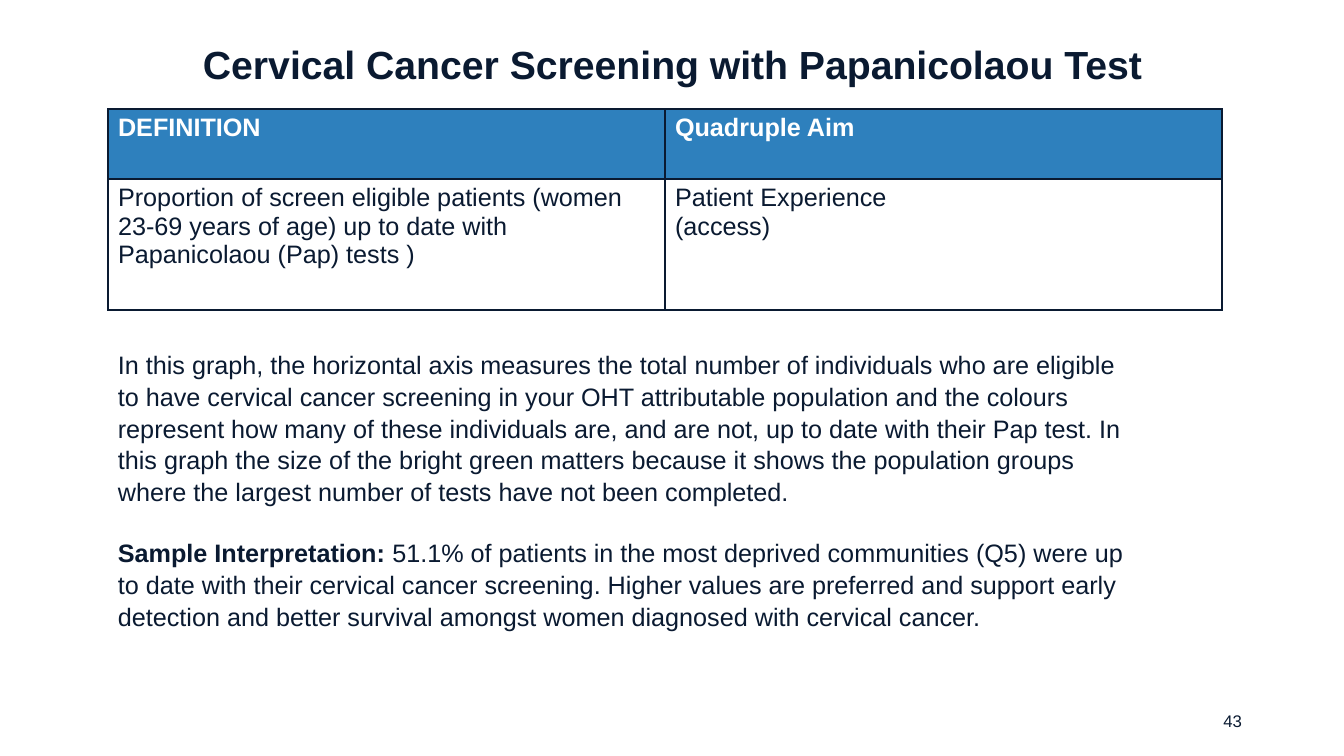
from dataclasses import dataclass

from lxml.etree import SubElement
from pptx import Presentation
from pptx.dml.color import RGBColor as RGB
from pptx.enum.text import MSO_ANCHOR as ANCHOR, MSO_AUTO_SIZE as FIT, PP_ALIGN as ALIGN
from pptx.oxml.ns import qn
from pptx.util import Pt

PX = 914400 / 100.8


@dataclass(frozen=True)
class Theme:
    font: str = "Arial"
    ink: str = "0A1A31"
    white: str = "FFFFFF"
    header: str = "2E80BD"
    title: int = 28
    body: int = 18
    number: int = 12


theme = Theme()


def px(*lengths):
    return [round(n * PX) for n in lengths]


def write(tf, *paragraphs, size=theme.body, color=theme.ink, bold=False,
          align=ALIGN.LEFT, anchor=ANCHOR.TOP, spacing=None, gap=0):
    """Fill a text frame; each paragraph is a string or a list of (text, bold) runs."""
    tf.word_wrap = True
    tf.vertical_anchor = anchor
    for i, content in enumerate(paragraphs):
        p = tf.add_paragraph() if i else tf.paragraphs[0]
        p.alignment = align
        p.line_spacing = spacing
        p.space_before = Pt(gap if i else 0)
        runs = [(content, bold)] if isinstance(content, str) else content
        for text, strong in runs:
            r = p.add_run()
            r.text = text
            r.font.name = theme.font
            r.font.size = Pt(size)
            r.font.bold = strong
            r.font.color.rgb = RGB.from_string(color)


prs = Presentation()
prs.slide_width, prs.slide_height = px(1344, 756)
s = prs.slides.add_slide(prs.slide_layouts[5])

# Title
title = s.shapes.title
title.left, title.top, title.width, title.height = px(78, 24, 1189, 85)
write(title.text_frame, "Cervical Cancer Screening with Papanicolaou Test", size=theme.title,
      bold=True, align=ALIGN.CENTER, anchor=ANCHOR.MIDDLE, spacing=0.9)

# Definition table
rows = [
    [["DEFINITION"], ["Quadruple Aim"]],
    [["Proportion of screen eligible patients (women 23-69 years of age) up to date with "
      "Papanicolaou (Pap) tests )"],
     ["Patient Experience", "(access)"]],
]
table = s.shapes.add_table(2, 2, *px(108, 109, 1114, 201)).table
for row, height in zip(table.rows, px(70, 131)):
    row.height = height
for column in table.columns:
    column.width = px(557)[0]

for i, row in enumerate(rows):
    header = i == 0
    for j, paragraphs in enumerate(row):
        cell = table.cell(i, j)
        tcPr = cell._tc.get_or_add_tcPr()
        for side in ("a:lnL", "a:lnR", "a:lnT", "a:lnB"):
            ln = SubElement(tcPr, qn(side), w=str(Pt(1)))
            fill = SubElement(ln, qn("a:solidFill"))
            SubElement(fill, qn("a:srgbClr"), val=theme.ink)
        cell.fill.solid()
        cell.fill.fore_color.rgb = RGB.from_string(theme.header if header else theme.white)
        write(cell.text_frame, *paragraphs, bold=header,
              color=theme.white if header else theme.ink)

# Explanation
explanation = s.shapes.add_textbox(*px(108, 343, 1040, 285)).text_frame
explanation.auto_size = FIT.SHAPE_TO_FIT_TEXT
write(
    explanation,
    "In this graph, the horizontal axis measures the total number of individuals who are eligible "
    "to have cervical cancer screening in your OHT attributable population and the colours "
    "represent how many of these individuals are, and are not, up to date with their Pap test. "
    "In this graph the size of the bright green matters because it shows the population groups "
    "where the largest number of tests have not been completed.",
    [("Sample Interpretation: ", True),
     ("51.1% of patients in the most deprived communities (Q5) were up to date with their "
      "cervical cancer screening. Higher values are preferred and support early detection and "
      "better survival amongst women diagnosed with cervical cancer.", False)],
    spacing=1.05, gap=21)

# Slide number
number = s.shapes.add_textbox(*px(950, 701, 302, 40)).text_frame
write(number, "43", size=theme.number, align=ALIGN.RIGHT, anchor=ANCHOR.MIDDLE)

prs.save("out.pptx")
